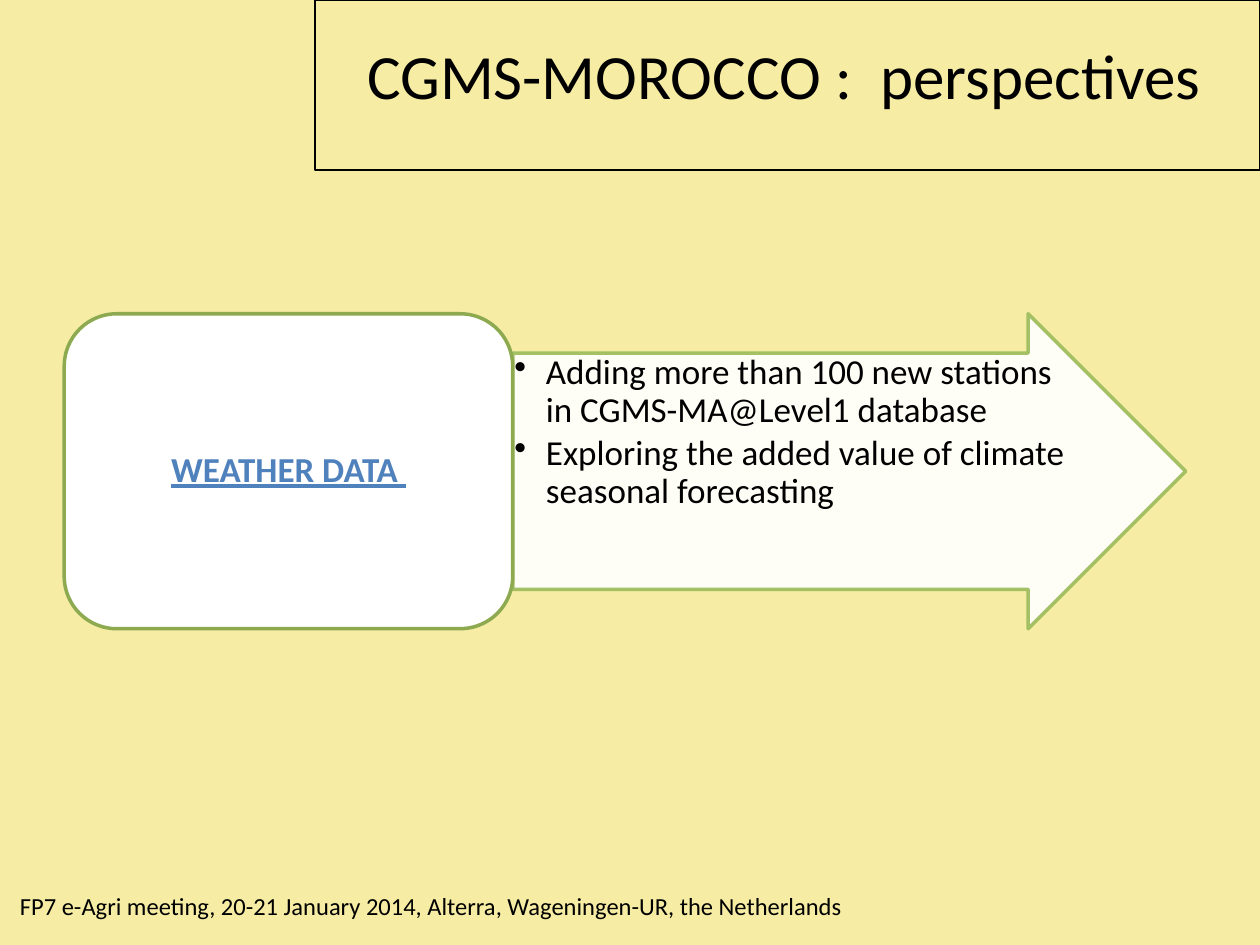
import pptx
import pptx.util
import pptx.dml.color
import pptx.enum.shapes
import pptx.enum.text
from lxml import etree

Pt = pptx.util.Pt
RGB = pptx.dml.color.RGBColor.from_string
SHAPES = pptx.enum.shapes.MSO_SHAPE
ALIGN = pptx.enum.text.PP_ALIGN
ANCHOR = pptx.enum.text.MSO_ANCHOR

COLORS = {
    "sand": "F6ECA4",
    "white": "FFFFFF",
    "black": "000000",
    "arrow edge": "9BBB59",
    "card edge": "8DAA51",
    "blue": "4F81BD",
}
FONT = "Calibri"

deck = pptx.Presentation()
deck.slide_width, deck.slide_height = pptx.util.Inches(10), pptx.util.Inches(7.5)
slide = deck.slides.add_slide(deck.slide_layouts[6])
slide.background.fill.solid()
slide.background.fill.fore_color.rgb = RGB(COLORS["sand"])


def area(left, top, width, height):
    """Turn percentages of the slide into a position and a size."""
    wide, high = deck.slide_width / 100, deck.slide_height / 100
    return int(left * wide), int(top * high), int(width * wide), int(height * high)


def add_text(place, lines, size, color="black", align=ALIGN.LEFT,
             anchor=ANCHOR.TOP, inset=(7.2, 3.6), spacing=None, bullet=False):
    """Add a text box with one paragraph per line and return its runs."""
    frame = slide.shapes.add_textbox(*area(*place)).text_frame
    frame.word_wrap = True
    frame.vertical_anchor = anchor
    frame.margin_left = frame.margin_right = Pt(inset[0])
    frame.margin_top = frame.margin_bottom = Pt(inset[1])
    runs = []
    for number, line in enumerate(lines):
        paragraph = frame.add_paragraph() if number else frame.paragraphs[0]
        paragraph.alignment = align
        if spacing:
            paragraph.line_spacing = spacing
        if bullet:
            paragraph.space_after = Pt(3)
            properties = paragraph._p.get_or_add_pPr()
            properties.set("marL", str(Pt(18)))
            properties.set("indent", str(-Pt(18)))
            etree.SubElement(properties, pptx.oxml.ns.qn("a:buChar")).set("char", "•")
        run = paragraph.add_run()
        run.text = line
        run.font.name, run.font.size = FONT, Pt(size)
        run.font.color.rgb = RGB(COLORS[color])
        runs.append(run)
    return runs


# Title frame, topic arrow and topic card
flow_top, flow_height = 33.2, 33.33
outlines = [
    (SHAPES.RECTANGLE, (25, 0, 75, 18), None, "black", 1, []),
    (SHAPES.RIGHT_ARROW, (40.7, flow_top, 53.4, flow_height),
     "white", "arrow edge", 2, [0.75, 0.5]),
    (SHAPES.ROUNDED_RECTANGLE, (5.1, flow_top, 35.6, flow_height),
     "white", "card edge", 2, []),
]
for kind, place, fill, edge, weight, adjustments in outlines:
    outline = slide.shapes.add_shape(kind, *area(*place))
    outline.shadow.inherit = False
    for index, value in enumerate(adjustments):
        outline.adjustments[index] = value
    if fill:
        outline.fill.solid()
        outline.fill.fore_color.rgb = RGB(COLORS[fill])
    else:
        outline.fill.background()
    outline.line.color.rgb = RGB(COLORS[edge])
    outline.line.width = Pt(weight)
    if kind == SHAPES.RIGHT_ARROW:
        # Fill and edge are 90 % opaque
        for color in outline._element.spPr.iter(pptx.oxml.ns.qn("a:srgbClr")):
            etree.SubElement(color, pptx.oxml.ns.qn("a:alpha")).set("val", "90000")

# Title
add_text((26.4, 1.07, 72.8, 13.6), ["CGMS-MOROCCO :  perspectives "], 36,
         align=ALIGN.CENTER, anchor=ANCHOR.MIDDLE)

# Planned work on the arrow
add_text((40.7, 37.37, 44.1, 25), [
    "Adding more than 100 new stations in CGMS-MA@Level1 database",
    "Exploring the added value of climate seasonal forecasting",
], 20, inset=(0.9, 0.9), spacing=0.9, bullet=True)

# Topic on the card
topic, = add_text((6.3, 34.8, 33.2, 30.13), ["WEATHER DATA "], 20, color="blue",
                  align=ALIGN.CENTER, anchor=ANCHOR.MIDDLE, inset=(6, 3), spacing=0.9)
topic.font.bold = topic.font.underline = True

# Meeting line
add_text((0.6, 93.6, 73.8, 4.53),
         ["FP7 e-Agri meeting, 20-21 January 2014, Alterra, Wageningen-UR, the Netherlands"], 14)

deck.save("out.pptx")
